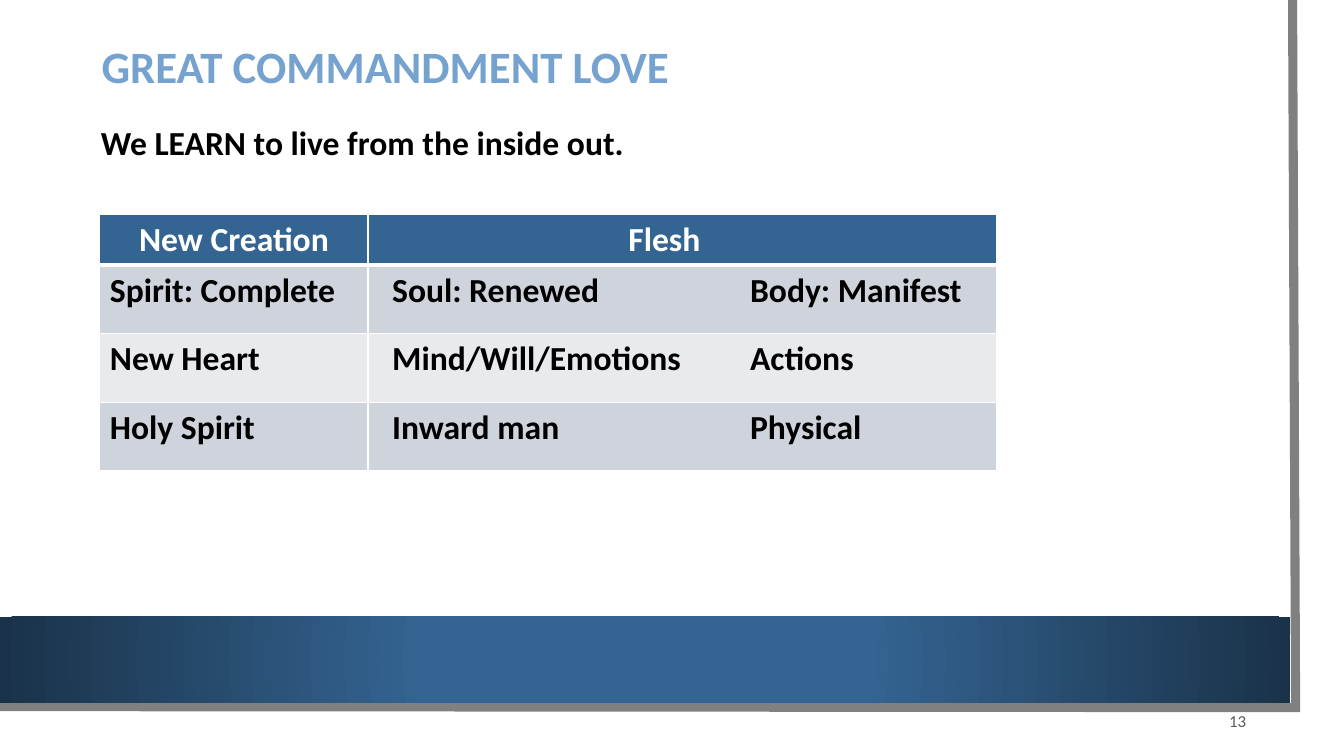
import pptx
import pptx.dml.color
import pptx.enum.shapes
import pptx.enum.text
import pptx.oxml
import pptx.oxml.ns
import pptx.util
from lxml import etree

PX = 9144  # EMU per px, 100 px to the inch
COLORS = {
    "white": "FFFFFF", "black": "000000", "edge": "808080", "title": "75A2CE",
    "number": "595959", "blue": "346492", "navy": "1A3249",
    "odd": "CED3DC", "even": "E8EAEE",
}
NS = pptx.oxml.ns.nsdecls("a")
ALIGN = pptx.enum.text.PP_ALIGN
ANCHOR = pptx.enum.text.MSO_ANCHOR


def rgb(name):
    return pptx.dml.color.RGBColor.from_string(COLORS[name])


class SlideBuilder:
    font = "Calibri"

    def __init__(self, slide):
        self.slide = slide

    def fill_paragraph(self, paragraph, text, size, color, bold=True, align=ALIGN.LEFT, tab=None):
        paragraph.text = text
        paragraph.alignment = align
        if tab:
            paragraph._p.get_or_add_pPr().append(pptx.oxml.parse_xml(
                f'<a:tabLst {NS}><a:tab pos="{tab * PX}" algn="l"/></a:tabLst>'))
        font = paragraph.font
        font.name, font.size, font.bold = self.font, pptx.util.Pt(size), bold
        font.color.rgb = rgb(color)

    def text(self, left, top, width, height, text, size, color, inset, **style):
        box = self.slide.shapes.add_textbox(left * PX, top * PX, width * PX, height * PX)
        frame = box.text_frame
        frame.word_wrap = True
        frame.vertical_anchor = ANCHOR.MIDDLE
        frame.margin_left = frame.margin_right = inset * PX
        frame.margin_top = frame.margin_bottom = 0
        self.fill_paragraph(frame.paragraphs[0], text, size, color, **style)

    def rect(self, left, top, width, height, color):
        shape = self.slide.shapes.add_shape(
            pptx.enum.shapes.MSO_SHAPE.RECTANGLE,
            left * PX, top * PX, width * PX, height * PX)
        shape.shadow.inherit = False
        shape.line.fill.background()
        shape.fill.solid()
        shape.fill.fore_color.rgb = rgb(color)
        return shape

    def glow_band(self, left, top, width, height, inner, outer):
        band = self.rect(left, top, width, height, inner)
        solid = band._element.spPr.find(pptx.oxml.ns.qn("a:solidFill"))
        solid.getparent().replace(solid, pptx.oxml.parse_xml(
            f'<a:gradFill {NS} rotWithShape="1"><a:gsLst>'
            f'<a:gs pos="34000"><a:srgbClr val="{COLORS[inner]}"/></a:gs>'
            f'<a:gs pos="100000"><a:srgbClr val="{COLORS[outer]}"/></a:gs></a:gsLst>'
            '<a:path path="circle"><a:fillToRect l="50000" t="50000" r="50000" b="50000"/>'
            '</a:path></a:gradFill>'))

    def outline(self, points, color, weight):
        builder = self.slide.shapes.build_freeform(*points[0], scale=PX)
        builder.add_line_segments(points[1:], close=False)
        shape = builder.convert_to_shape()
        shape.shadow.inherit = False
        shape.fill.background()
        shape.line.color.rgb = rgb(color)
        shape.line.width = pptx.util.Pt(weight)
        miter = etree.SubElement(shape.line._ln, pptx.oxml.ns.qn("a:miter"))
        miter.set("lim", "800000")

    def cell(self, cell, text, fill, color, top_line, bottom_line, margins, **style):
        tc_pr = cell._tc.get_or_add_tcPr()
        for side, points in zip("LRTB", (1, 1, top_line, bottom_line)):
            tc_pr.append(pptx.oxml.parse_xml(
                f'<a:ln{side} {NS} w="{points * 12700}"><a:solidFill>'
                f'<a:srgbClr val="{COLORS["white"]}"/></a:solidFill></a:ln{side}>'))
        cell.fill.solid()
        cell.fill.fore_color.rgb = rgb(fill)
        cell.margin_left, cell.margin_right = (m * PX for m in margins)
        self.fill_paragraph(cell.text_frame.paragraphs[0], text, 24, color, **style)

    def table(self, left, top, widths, heights, rows):
        table = self.slide.shapes.add_table(
            len(rows), len(widths), left * PX, top * PX,
            sum(widths) * PX, sum(heights) * PX).table
        for column, width in zip(table.columns, widths):
            column.width = width * PX
        for r, (texts, height) in enumerate(zip(rows, heights)):
            table.rows[r].height = height * PX
            for c, text in enumerate(texts):
                if r == 0:
                    self.cell(table.cell(r, c), text, "blue", "white", 1, 3,
                              (10, 45 if c else 10), align=ALIGN.CENTER)
                else:
                    self.cell(table.cell(r, c), text, "odd" if r % 2 else "even", "black",
                              3 if r == 1 else 1, 1, (24 if c else 10, 10),
                              tab=355 if c else None)


def main():
    deck = pptx.Presentation()
    deck.slide_width, deck.slide_height = 1333 * PX, 750 * PX
    page = SlideBuilder(deck.slides.add_slide(deck.slide_layouts[6]))

    # Page frame and bottom band
    page.rect(0, 0, 1310, 727, "white")
    page.outline([(1282, 0), (1285, 702), (-3, 701)], "edge", 6.5)
    page.glow_band(0, 612, 1280, 85, "blue", "navy")

    # Heading, lead sentence and page number
    page.text(91, 14, 1080, 103, "GREAT COMMANDMENT LOVE", 32, "title", 10)
    page.text(96, 121, 966, 40, "We LEARN to live from the inside out.", 24, "black", 4)
    page.text(1180, 700, 61, 30, "13", 12, "number", 5, bold=False, align=ALIGN.RIGHT)

    # New creation and flesh
    page.table(99, 213, [266, 623], [50, 68, 68, 68], [
        ("New Creation", "Flesh"),
        ("Spirit: Complete", "Soul: Renewed\tBody: Manifest"),
        ("New Heart", "Mind/Will/Emotions\tActions"),
        ("Holy Spirit", "Inward man\tPhysical"),
    ])
    deck.save("out.pptx")


if __name__ == "__main__":
    main()
